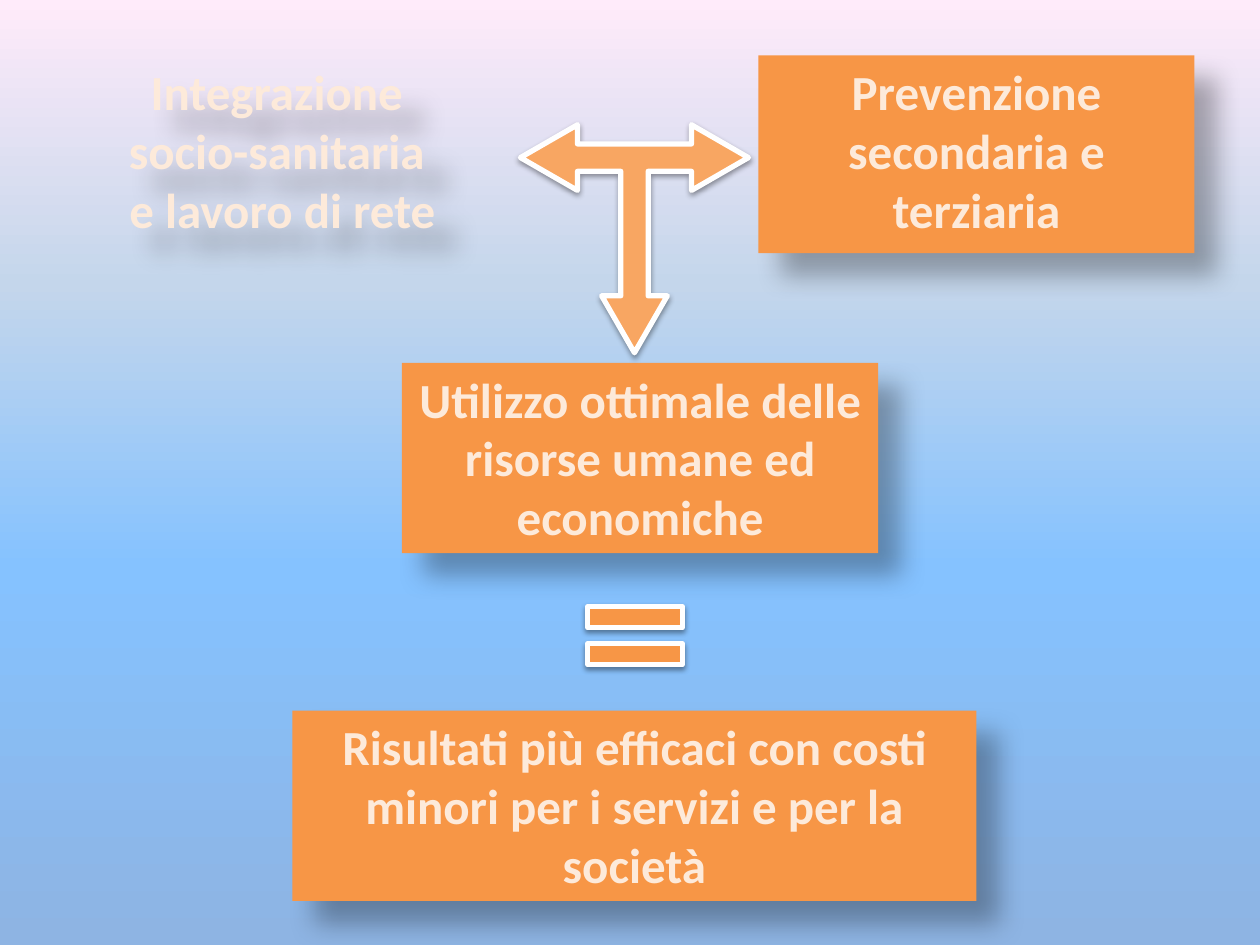
from dataclasses import dataclass

from lxml import etree
from pptx import Presentation, util as u
from pptx.dml.color import RGBColor
from pptx.enum import shapes, text
from pptx.oxml import ns


@dataclass(frozen=True)
class Theme:
    font: str = "Calibri"
    size: int = 28
    ink: str = "FDEADA"
    box: str = "F79646"
    arrow: str = "F8A662"
    outline: str = "FFFFFF"
    shadow: str = "000000"
    sky: tuple = ((0, "8EB4E3"), (40, "85C2FF"), (70, "C4D6EB"), (100, "FFEBFA"))


THEME = Theme()
KIND = shapes.MSO_SHAPE


def rgb(value):
    return RGBColor.from_string(value)


def add_color(parent, value, alpha=None):
    clr = etree.SubElement(parent, ns.qn("a:srgbClr"), val=value)
    if alpha is not None:
        etree.SubElement(clr, ns.qn("a:alpha"), val=str(alpha * 1000))


def paint_background(s):
    fill = s.background.fill
    fill.gradient()
    fill.gradient_angle = 90
    stops = s.element.xpath(".//a:gsLst")[0]
    for stop in list(stops):
        stops.remove(stop)
    for pos, color in THEME.sky:
        stop = etree.SubElement(stops, ns.qn("a:gs"), pos=str(pos * 1000))
        add_color(stop, color)


def add_shadow(sp, alpha, blur, dist, angle):
    sp.shadow.inherit = False
    effects = sp.element.spPr.find(ns.qn("a:effectLst"))
    shadow = etree.SubElement(
        effects, ns.qn("a:outerShdw"), blurRad=str(u.Pt(blur)),
        dist=str(u.Pt(dist)), dir=str(angle * 60000), algn="tl", rotWithShape="0")
    add_color(shadow, THEME.shadow, alpha)


def add_filled(s, kind, at, color):
    sp = s.shapes.add_shape(kind, *(u.Inches(v) for v in at))
    if color:
        sp.fill.solid()
        sp.fill.fore_color.rgb = rgb(color)
    else:
        sp.fill.background()
    return sp


def write_text(sp, lines, size=THEME.size, color=THEME.ink, bold=True):
    tf = sp.text_frame
    tf.word_wrap = True
    tf.auto_size = text.MSO_AUTO_SIZE.SHAPE_TO_FIT_TEXT
    tf.vertical_anchor = text.MSO_ANCHOR.TOP
    for i, line in enumerate(lines):
        p = tf.add_paragraph() if i else tf.paragraphs[0]
        p.alignment = text.PP_ALIGN.CENTER
        r = p.add_run()
        r.text = line
        r.font.name = THEME.font
        r.font.size = u.Pt(size)
        r.font.bold = bold
        r.font.color.rgb = rgb(color)


def add_box(s, at, *lines, color=THEME.box):
    sp = add_filled(s, KIND.RECTANGLE, at, color)
    sp.line.fill.background()
    add_shadow(sp, alpha=30, blur=15, dist=18, angle=45)
    write_text(sp, lines)


def add_symbol(s, kind, at, color, adjustments, rotation=0):
    sp = add_filled(s, kind, at, color)
    sp.line.color.rgb = rgb(THEME.outline)
    sp.line.width = u.Pt(3)
    sp.rotation = rotation
    for i, value in enumerate(adjustments):
        sp.adjustments[i] = value
    add_shadow(sp, alpha=38, blur=3.1, dist=1.6, angle=90)


def main():
    prs = Presentation()
    prs.slide_width, prs.slide_height = u.Inches(10), u.Inches(7.5)
    s = prs.slides.add_slide(prs.slide_layouts[6])
    paint_background(s)
    add_box(s, (0.43, 0.44, 3.62, 1.51),
            "Integrazione ", "socio-sanitaria ", "e lavoro di rete", color=None)
    add_box(s, (6.02, 0.44, 3.46, 1.57), "Prevenzione secondaria e terziaria")
    add_box(s, (3.19, 2.88, 3.78, 1.51),
            "Utilizzo ottimale delle risorse umane ed economiche")
    add_box(s, (2.32, 5.64, 5.43, 1.51),
            "Risultati più efficaci con costi minori per i servizi e per la società")
    add_symbol(s, KIND.MATH_EQUAL, (4.53, 4.69, 1.02, 0.71), THEME.box, (0.237, 0.174))
    add_symbol(s, KIND.LEFT_RIGHT_UP_ARROW, (4.13, 0.99, 1.81, 1.81), THEME.arrow,
               (0.12, 0.144, 0.25), rotation=180)
    prs.save("out.pptx")


if __name__ == "__main__":
    main()
